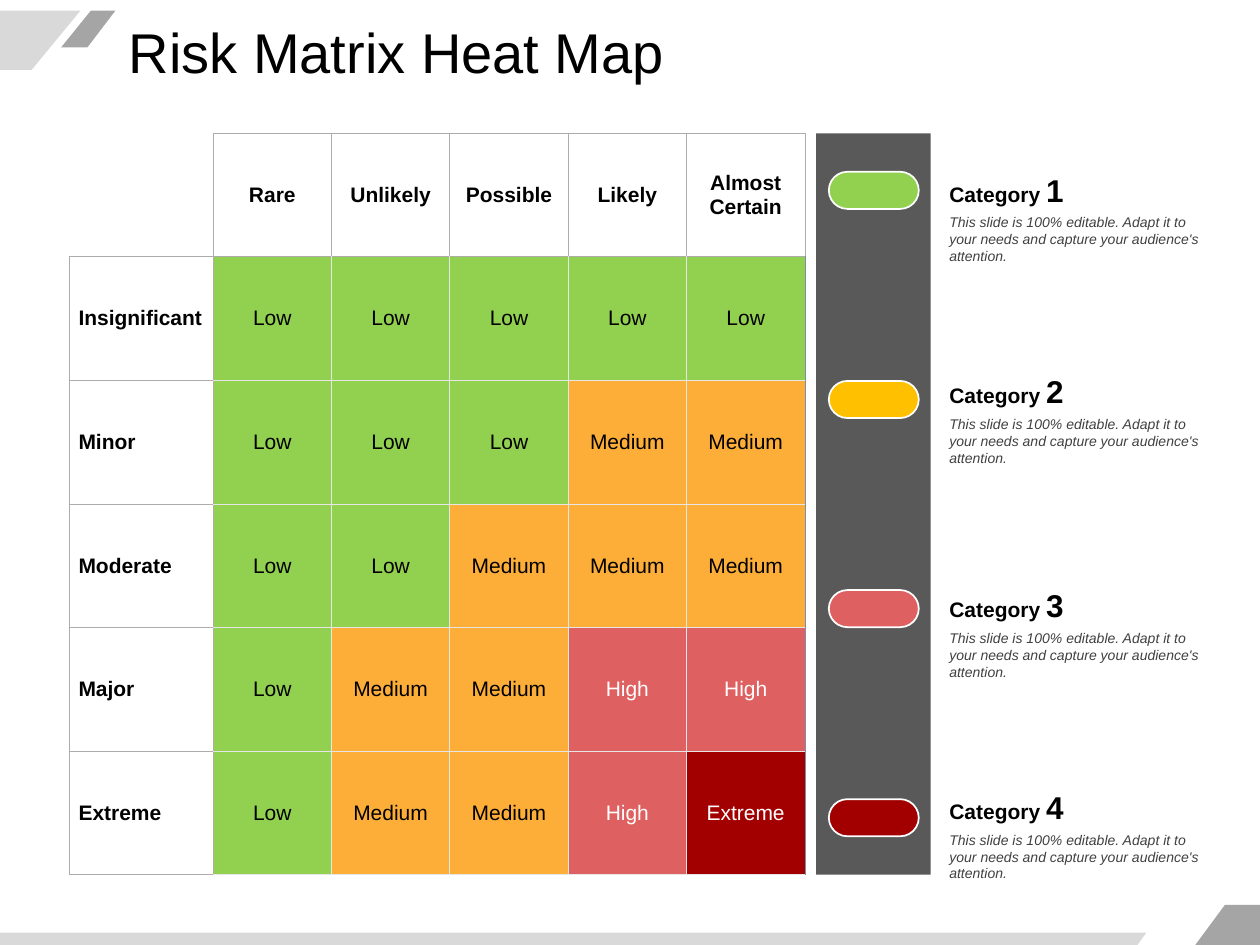
from lxml import etree
from pptx import Presentation
from pptx.dml.color import RGBColor
from pptx.enum import shapes, text
from pptx.oxml.ns import qn
from pptx.util import Pt

GREEN, ORANGE, AMBER, RED, DARK_RED = "92D050", "FDAE39", "FFC000", "DE6060", "A20000"
BLACK, WHITE, LIGHT_GRAY, MID_GRAY = "000000", "FFFFFF", "D9D9D9", "A5A5A5"
HEADER_BORDER, BODY_BORDER, EDGE_BORDER = "AFABAB", "E7E6E6", "7A8EAA"


def color(value):
    return RGBColor.from_string(value)


def set_borders(cell, colors, width=0.5):
    """Give the left, right, top and bottom borders their colours, in that order."""
    properties = cell._tc.get_or_add_tcPr()
    for index, (side, value) in enumerate(zip("LRTB", colors)):
        line = etree.Element(qn(f"a:ln{side}"), w=str(Pt(width)))
        fill = etree.SubElement(line, qn("a:solidFill"))
        etree.SubElement(fill, qn("a:srgbClr"), val=value)
        properties.insert(index, line)


presentation = Presentation()
presentation.slide_width, presentation.slide_height = Pt(720), Pt(540)
slide = presentation.slides.add_slide(presentation.slide_layouts[5])

# Title
title = slide.shapes.title
title.left, title.top, title.width, title.height = Pt(66.4), Pt(6), Pt(653.6), Pt(46)
frame = title.text_frame
frame.text = "Risk Matrix Heat Map"
frame.auto_size = text.MSO_AUTO_SIZE.NONE
frame.vertical_anchor = text.MSO_ANCHOR.MIDDLE
paragraph = frame.paragraphs[0]
paragraph.alignment = text.PP_ALIGN.LEFT
paragraph.font.size, paragraph.font.name = Pt(32), "Arial"
paragraph.font.color.rgb = color(BLACK)

# Corner decorations
decorations = [
    (LIGHT_GRAY, [(0, 6), (46.1, 6), (18.2, 40.5), (0, 40.5)]),
    (MID_GRAY, [(66.4, 6), (49.5, 27.4), (35.4, 27.4), (52.5, 6)]),
    (LIGHT_GRAY, [(0, 533.4), (655, 533), (649.6, 540), (0, 540)]),
    (MID_GRAY, [(682.6, 540), (699.5, 517), (720, 517), (720, 540)]),
]
for fill, points in decorations:
    builder = slide.shapes.build_freeform(*points[0], scale=Pt(1))
    builder.add_line_segments(points[1:], close=True)
    shape = builder.convert_to_shape()
    shape.shadow.inherit = False
    shape.fill.solid()
    shape.fill.fore_color.rgb = color(fill)
    shape.line.fill.background()

# Risk matrix
rows = [
    ["", "Rare", "Unlikely", "Possible", "Likely", "Almost Certain"],
    ["Insignificant", "Low", "Low", "Low", "Low", "Low"],
    ["Minor", "Low", "Low", "Low", "Medium", "Medium"],
    ["Moderate", "Low", "Low", "Medium", "Medium", "Medium"],
    ["Major", "Low", "Medium", "Medium", "High", "High"],
    ["Extreme", "Low", "Medium", "Medium", "High", "Extreme"],
]
levels = {
    "Low": (GREEN, BLACK),
    "Medium": (ORANGE, BLACK),
    "High": (RED, WHITE),
    "Extreme": (DARK_RED, WHITE),
}
matrix_top, matrix_height = 76.2, 423.6
table = slide.shapes.add_table(
    6, 6, Pt(39.6), Pt(matrix_top), Pt(420.4), Pt(matrix_height)).table
table.first_row = table.horz_banding = False
for index, column in enumerate(table.columns):
    column.width = Pt(67.64 if index else 82.2)
for row in table.rows:
    row.height = Pt(matrix_height / 6)

for r, labels in enumerate(rows):
    for c, label in enumerate(labels):
        cell = table.cell(r, c)
        is_header = r == 0 or c == 0
        if is_header:
            cell.fill.background()
            font_color = BLACK
            borders = [HEADER_BORDER] * 4
        else:
            fill, font_color = levels[label]
            cell.fill.solid()
            cell.fill.fore_color.rgb = color(fill)
            borders = [
                HEADER_BORDER if c == 1 else BODY_BORDER,
                EDGE_BORDER if c == 5 else BODY_BORDER,
                HEADER_BORDER if r == 1 else BODY_BORDER,
                BODY_BORDER,
            ]
        if r == c == 0:
            borders = [WHITE, HEADER_BORDER, WHITE, HEADER_BORDER]
        set_borders(cell, borders)
        cell.vertical_anchor = text.MSO_ANCHOR.MIDDLE
        cell.margin_left = cell.margin_right = Pt(5.3)
        cell.margin_top = cell.margin_bottom = Pt(2.7)
        cell.text = label
        paragraph = cell.text_frame.paragraphs[0]
        paragraph.alignment = text.PP_ALIGN.CENTER if c else text.PP_ALIGN.LEFT
        paragraph.font.size, paragraph.font.name = Pt(12), "Arial"
        paragraph.font.bold = is_header
        paragraph.font.color.rgb = color(font_color)

# Legend bar with one pill per category
bar = slide.shapes.add_shape(
    shapes.MSO_SHAPE.RECTANGLE, Pt(466.4), Pt(matrix_top), Pt(65.4), Pt(matrix_height))
bar.shadow.inherit = False
bar.fill.solid()
bar.fill.fore_color.rgb = color("595959")
bar.line.fill.background()

for index, fill in enumerate([GREEN, AMBER, RED, DARK_RED]):
    pill = slide.shapes.add_shape(
        shapes.MSO_SHAPE.ROUNDED_RECTANGLE,
        Pt(473.6), Pt(98.2 + 119.5 * index), Pt(51.4), Pt(21.2))
    pill.adjustments[0] = 0.5
    pill.shadow.inherit = False
    pill.fill.solid()
    pill.fill.fore_color.rgb = color(fill)
    pill.line.color.rgb = color(WHITE)
    pill.line.width = Pt(1)

# Category texts
description = ("This slide is 100% editable. Adapt it to your needs and "
               "capture your audience's attention.")
for number, top in enumerate([93.8, 209, 331.4, 446.6], start=1):
    heading = slide.shapes.add_textbox(Pt(535.4), Pt(top), Pt(176.4), Pt(29))
    note = slide.shapes.add_textbox(Pt(535.4), Pt(top + 24.5), Pt(162.7), Pt(36.8))
    for box in (heading, note):
        box.text_frame.word_wrap = True
        box.text_frame.vertical_anchor = text.MSO_ANCHOR.MIDDLE

    paragraph = heading.text_frame.paragraphs[0]
    paragraph.font.name, paragraph.font.bold = "Arial", True
    paragraph.font.color.rgb = color(BLACK)
    for words, size in (("Category ", 12), (str(number), 18)):
        run = paragraph.add_run()
        run.text = words
        run.font.size = Pt(size)

    paragraph = note.text_frame.paragraphs[0]
    paragraph.text = description
    paragraph.font.name, paragraph.font.size = "Arial", Pt(8)
    paragraph.font.italic = True
    paragraph.font.color.rgb = color("404040")

presentation.save("out.pptx")
